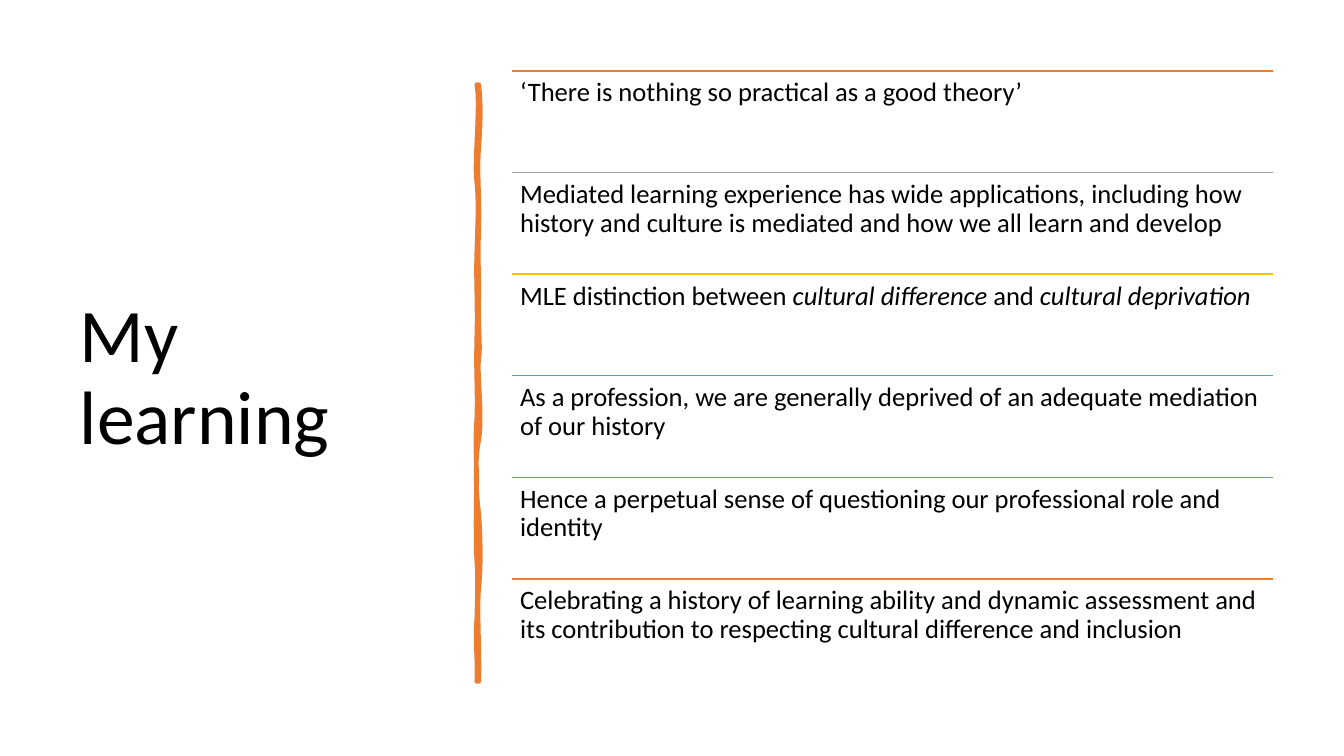
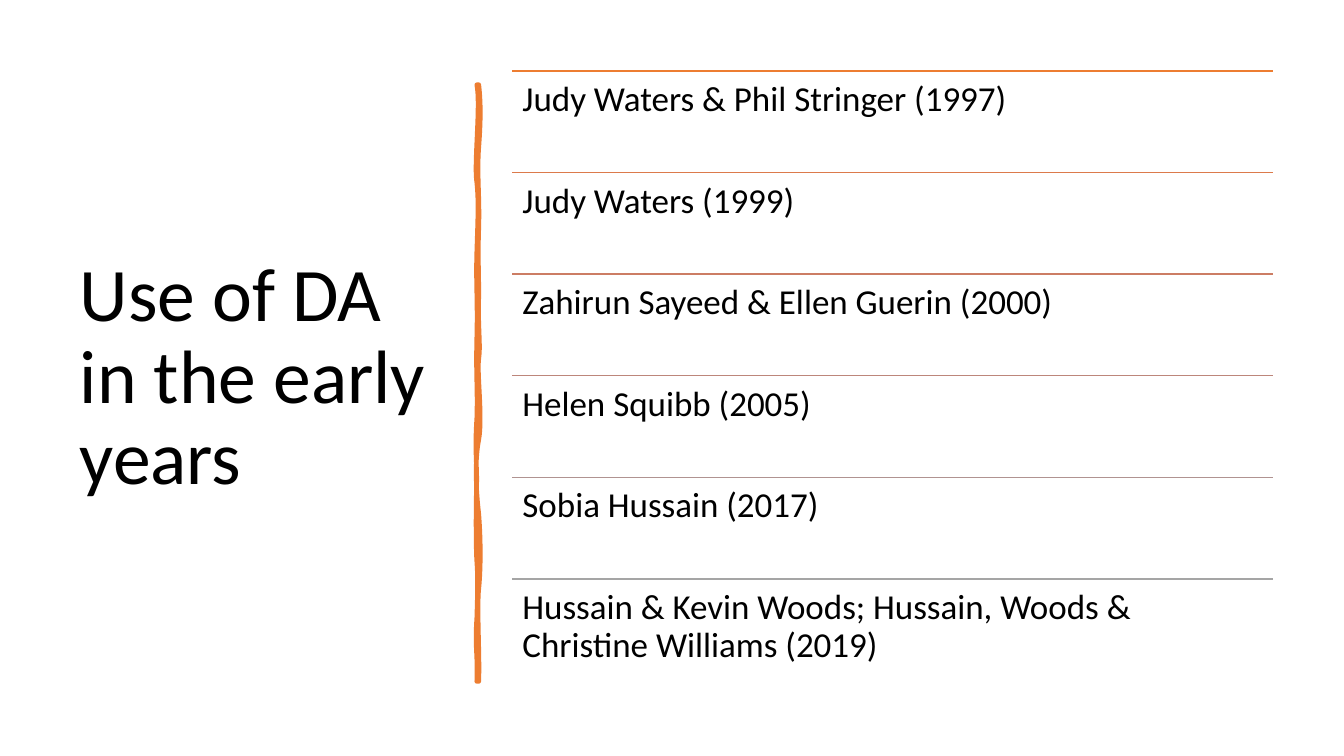
from lxml import etree
from pptx import Presentation
from pptx.dml.color import RGBColor
from pptx.enum.shapes import MSO_CONNECTOR
from pptx.enum.text import MSO_ANCHOR
from pptx.oxml.ns import qn
from pptx.util import Emu, Pt

STRAIGHT = MSO_CONNECTOR.STRAIGHT
TOP, MIDDLE = MSO_ANCHOR.TOP, MSO_ANCHOR.MIDDLE

# Shared style; lengths are px at 300 to the inch
PX = 3048
SLIDE_W, SLIDE_H = 4000, 2250
FONT, INK, ACCENT = "Calibri", "000000", "ED7D31"
TITLE_BOX, TITLE_SIZE = (208, 211, 1120, 1833), 54
ROWS_X, ROWS_Y, ROWS_W, ROWS_H = 1524, 211, 2265, 1814

# Hand-drawn bar: start point, then cubic curves (control, control, end)
BAR_START = (1425, 252)
BAR_CURVES = [
    # right edge, downwards
    (1431, 306, 1431, 357, 1425, 438), (1419, 519, 1428, 585, 1425, 678),
    (1422, 771, 1425, 786, 1425, 882), (1422, 975, 1431, 1026, 1425, 1068),
    (1419, 1110, 1437, 1242, 1425, 1308), (1413, 1371, 1416, 1452, 1425, 1530),
    (1431, 1608, 1431, 1692, 1425, 1752), (1419, 1809, 1428, 1950, 1425, 2028),
    (1422, 2028, 1419, 2028, 1419, 2028),
    # left edge, upwards
    (1422, 1938, 1413, 1932, 1419, 1839), (1422, 1749, 1422, 1710, 1419, 1671),
    (1416, 1632, 1416, 1485, 1419, 1431), (1419, 1377, 1413, 1335, 1419, 1245),
    (1422, 1158, 1416, 1119, 1419, 1005), (1422, 894, 1416, 843, 1419, 750),
    (1422, 654, 1425, 600, 1419, 543), (1410, 489, 1431, 312, 1419, 252),
    (1422, 252, 1422, 252, 1425, 252),
]

# Each row: rule colour, then text runs as (text, italic)
SLIDES = [
    {"title": "My learning", "size": 19, "inset": 24, "rows": [
        (ACCENT, [("‘There is nothing so practical as a good theory’", False)]),
        ("A5A5A5", [("Mediated learning experience has wide applications, including how "
                     "history and culture is mediated and how we all learn and develop", False)]),
        ("FFC000", [("MLE distinction between ", False), ("cultural difference ", True),
                    ("and ", False), ("cultural deprivation", True)]),
        ("5B9BD5", [("As a profession, we are generally deprived of an adequate mediation "
                     "of our history", False)]),
        ("70AD47", [("Hence a perpetual sense of questioning our professional role and "
                     "identity", False)]),
        (ACCENT, [("Celebrating a history of learning ability and dynamic assessment and "
                   "its contribution to respecting cultural difference and inclusion", False)]),
    ]},
    {"title": "Use of DA in the early years", "size": 25, "inset": 31, "rows": [
        (ACCENT, [("Judy Waters & Phil Stringer (1997)", False)]),
        ("DC7A4B", [("Judy Waters (1999)", False)]),
        ("CC7D64", [("Zahirun Sayeed & Ellen Guerin (2000)", False)]),
        ("BD867B", [("Helen Squibb (2005)", False)]),
        ("B09391", [("Sobia Hussain (2017)", False)]),
        ("A5A5A5", [("Hussain & Kevin Woods; Hussain, Woods & "
                     "Christine Williams (2019)", False)]),
    ]},
]


def px(n):
    return Emu(round(n * PX))


def rgb(code):
    return RGBColor.from_string(code)


class Deck:
    def __init__(self):
        self.prs = Presentation()
        self.prs.slide_width, self.prs.slide_height = px(SLIDE_W), px(SLIDE_H)
        self.s = None

    def new_slide(self):
        self.s = self.prs.slides.add_slide(self.prs.slide_layouts[6])

    def text(self, box, runs, size, anchor=TOP, inset=(30, 15)):
        tf = self.s.shapes.add_textbox(*map(px, box)).text_frame
        dx, dy = map(px, inset)
        frame = {"word_wrap": True, "vertical_anchor": anchor, "margin_left": dx,
                 "margin_right": dx, "margin_top": dy, "margin_bottom": dy}
        for name, value in frame.items():
            setattr(tf, name, value)
        p = tf.paragraphs[0]
        p.line_spacing = 0.9
        for content, italic in runs:
            r = p.add_run()
            r.text = content
            for name, value in {"name": FONT, "size": Pt(size), "italic": italic}.items():
                setattr(r.font, name, value)
            r.font.color.rgb = rgb(INK)

    def rule(self, x, y, w, color):
        line = self.s.shapes.add_connector(STRAIGHT, px(x), px(y), px(x + w), px(y))
        line.line.color.rgb = rgb(color)
        line.line.width = Pt(1)
        etree.SubElement(line._element.spPr, qn("a:effectLst"))

    def bar(self):
        builder = self.s.shapes.build_freeform(*BAR_START, scale=PX)
        builder.add_line_segments([curve[-2:] for curve in BAR_CURVES], close=False)
        sp = builder.convert_to_shape()
        # Turn each straight segment into a cubic curve
        left, top = min(c[4] for c in BAR_CURVES), BAR_START[1]
        segments = list(sp._element.iter(qn("a:lnTo")))
        for segment, curve in zip(segments, BAR_CURVES):
            cubic = etree.Element(qn("a:cubicBezTo"))
            for x, y in zip(curve[::2], curve[1::2]):
                etree.SubElement(cubic, qn("a:pt"), x=str(x - left), y=str(y - top))
            outline = segment.getparent()
            outline.replace(segment, cubic)
        etree.SubElement(outline, qn("a:close"))
        sp.shadow.inherit = False
        sp.fill.solid()
        sp.fill.fore_color.rgb = rgb(ACCENT)
        sp.line.color.rgb = rgb(ACCENT)
        sp.line.width = Pt(3.25)
        etree.SubElement(sp.line._get_or_add_ln(), qn("a:round"))

    def rows(self, rows, size, inset):
        h = ROWS_H / len(rows)
        for i, (color, runs) in enumerate(rows):
            y = ROWS_Y + i * h
            self.rule(ROWS_X, y, ROWS_W, color)
            self.text((ROWS_X, y, ROWS_W, h), runs, size, inset=(inset, inset))


def main():
    deck = Deck()
    for content in SLIDES:
        deck.new_slide()
        deck.text(TITLE_BOX, [(content["title"], False)], TITLE_SIZE, anchor=MIDDLE)
        deck.bar()
        deck.rows(content["rows"], content["size"], content["inset"])
    deck.prs.save("out.pptx")


if __name__ == "__main__":
    main()
